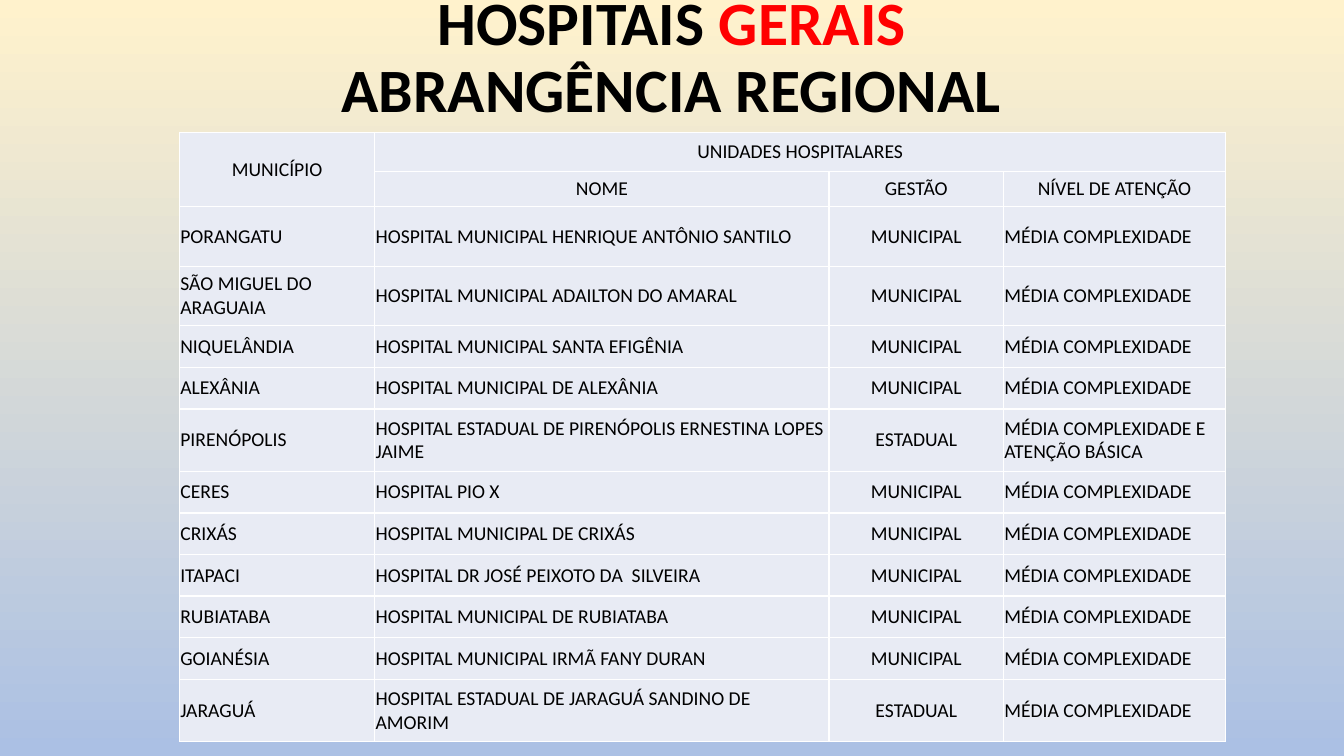
from lxml import etree
from pptx import Presentation
from pptx.dml import color
from pptx.enum import text
from pptx.oxml import ns
from pptx.util import Pt

FONT = "Calibri"
HEADERS = [
    ["MUNICÍPIO", "UNIDADES HOSPITALARES", "", ""],
    ["", "NOME", "GESTÃO", "NÍVEL DE ATENÇÃO"],
]
MEDIA = "MÉDIA COMPLEXIDADE"
HOSPITALS = [
    ["PORANGATU", "HOSPITAL MUNICIPAL HENRIQUE ANTÔNIO SANTILO", "MUNICIPAL", MEDIA],
    ["SÃO MIGUEL DO ARAGUAIA", "HOSPITAL MUNICIPAL ADAILTON DO AMARAL", "MUNICIPAL", MEDIA],
    ["NIQUELÂNDIA", "HOSPITAL MUNICIPAL SANTA EFIGÊNIA", "MUNICIPAL", MEDIA],
    ["ALEXÂNIA", "HOSPITAL MUNICIPAL DE ALEXÂNIA", "MUNICIPAL", MEDIA],
    ["PIRENÓPOLIS", "HOSPITAL ESTADUAL DE PIRENÓPOLIS ERNESTINA LOPES JAIME",
     "ESTADUAL", MEDIA + " E ATENÇÃO BÁSICA"],
    ["CERES", "HOSPITAL PIO X", "MUNICIPAL", MEDIA],
    ["CRIXÁS", "HOSPITAL MUNICIPAL DE CRIXÁS", "MUNICIPAL", MEDIA],
    ["ITAPACI", "HOSPITAL DR JOSÉ PEIXOTO DA  SILVEIRA", "MUNICIPAL", MEDIA],
    ["RUBIATABA", "HOSPITAL MUNICIPAL DE RUBIATABA", "MUNICIPAL", MEDIA],
    ["GOIANÉSIA", "HOSPITAL MUNICIPAL IRMÃ FANY DURAN", "MUNICIPAL", MEDIA],
    ["JARAGUÁ", "HOSPITAL ESTADUAL DE JARAGUÁ SANDINO DE AMORIM", "ESTADUAL", MEDIA],
]
COLUMN_SHARES = [139.5, 324.5, 124.6, 158.8]
ROW_SHARES = [28, 25.2, 42.7, 42.5, 29.7, 29.7, 44.6] + [29.7] * 5 + [44.6]


def rgb(value):
    return color.RGBColor.from_string(value)


def add_background(s, top, bottom):
    fill = s.background.fill
    fill.gradient()
    fill.gradient_angle = 270
    for stop, value in zip(fill.gradient_stops, (top, bottom)):
        stop.color.rgb = rgb(value)


def add_title(s, x, y, w, h):
    sp = s.shapes.title
    sp.left, sp.top, sp.width, sp.height = Pt(x), Pt(y), Pt(w), Pt(h)
    tf = sp.text_frame
    tf.word_wrap = True
    tf.auto_size = text.MSO_AUTO_SIZE.NONE
    tf.vertical_anchor = text.MSO_ANCHOR.MIDDLE
    p = tf.paragraphs[0]
    p.alignment = text.PP_ALIGN.CENTER
    p.line_spacing = 0.9
    p.font.name, p.font.size, p.font.bold = FONT, Pt(44), True
    for words, value in (("HOSPITAIS ", "000000"), ("GERAIS", "FF0000"),
                         ("ABRANGÊNCIA REGIONAL", "000000")):
        if words.startswith("ABRANGÊNCIA"):
            p.add_line_break()
        r = p.add_run()
        r.text = words
        r.font.color.rgb = rgb(value)


def add_borders(cell, value, width):
    tc_pr = cell._tc.get_or_add_tcPr()
    for side in ("a:lnL", "a:lnR", "a:lnT", "a:lnB"):
        ln = etree.SubElement(tc_pr, ns.qn(side), w=str(Pt(width)))
        fill = etree.SubElement(ln, ns.qn("a:solidFill"))
        etree.SubElement(fill, ns.qn("a:srgbClr"), val=value)


def format_cell(cell, words, centred, margin_top, margin_bottom):
    add_borders(cell, "FFFFFF", 0.96)
    cell.fill.solid()
    cell.fill.fore_color.rgb = rgb("E8EBF4")
    cell.vertical_anchor = text.MSO_ANCHOR.MIDDLE
    cell.margin_left = cell.margin_right = Pt(0.6)
    cell.margin_top, cell.margin_bottom = Pt(margin_top), Pt(margin_bottom)
    p = cell.text_frame.paragraphs[0]
    p.alignment = text.PP_ALIGN.CENTER if centred else text.PP_ALIGN.LEFT
    p.font.name, p.font.size = FONT, Pt(14)
    p.font.color.rgb = rgb("000000")
    if words:
        p.add_run().text = words


def add_hospital_table(s, x, y, w, h):
    rows = HEADERS + HOSPITALS
    frame = s.shapes.add_table(len(rows), len(COLUMN_SHARES), Pt(x), Pt(y), Pt(w), Pt(h))
    table = frame.table
    table.first_row = table.horz_banding = False
    for column, share in zip(table.columns, COLUMN_SHARES):
        column.width = Pt(w * share / sum(COLUMN_SHARES))
    for row, share in zip(table.rows, ROW_SHARES):
        row.height = Pt(h * share / sum(ROW_SHARES))
    for i, row in enumerate(rows):
        margins = (0.6, 0) if i == len(HEADERS) else (3.6, 3.6)
        for j, words in enumerate(row):
            centred = i < len(HEADERS) or j == 2
            format_cell(table.cell(i, j), words, centred, *margins)
    table.cell(0, 0).merge(table.cell(1, 0))
    table.cell(0, 1).merge(table.cell(0, 3))


def main():
    prs = Presentation()
    prs.slide_width, prs.slide_height = Pt(960), Pt(540)
    s = prs.slides.add_slide(prs.slide_layouts[5])
    add_background(s, "FFF2CC", "ABC0E4")
    add_title(s, 73, -10, 813.5, 104.5)
    add_hospital_table(s, 128.2, 94.4, 747.4, 435.6)
    prs.save("out.pptx")


if __name__ == "__main__":
    main()
